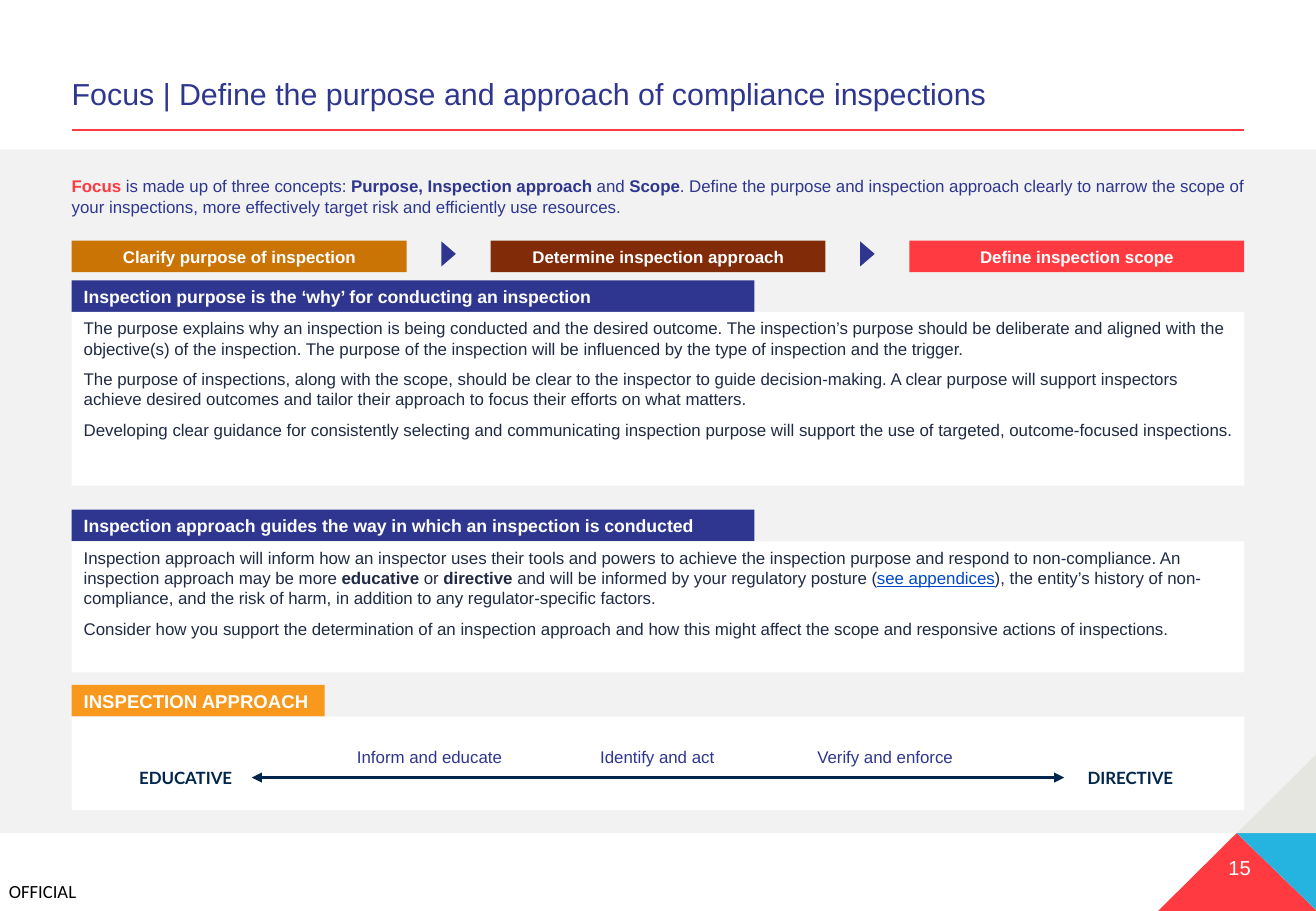
from dataclasses import dataclass

from lxml.etree import SubElement
from pptx import Presentation
from pptx.dml.color import RGBColor
from pptx.enum.shapes import MSO_CONNECTOR, MSO_SHAPE
from pptx.enum.text import MSO_ANCHOR, MSO_AUTO_SIZE, PP_ALIGN
from pptx.oxml.ns import qn
from pptx.util import Inches, Pt


@dataclass(frozen=True)
class Theme:
    navy: str = "2E368F"
    red: str = "FF3A40"
    ochre: str = "CA7406"
    brown: str = "822B08"
    orange: str = "F8981D"
    blue: str = "25B3E0"
    stone: str = "E6E6E1"
    grey: str = "F2F2F2"
    white: str = "FFFFFF"
    black: str = "000000"
    ink: str = "1F2A44"
    link: str = "0048C7"
    axis: str = "00264D"
    sans: str = "Arial"
    label: str = "Lato"
    marking: str = "Calibri"
    title_size: float = 18
    number_size: float = 12
    tag_size: float = 11
    heading_size: float = 10.5
    body_size: float = 10


THEME = Theme()
WIDTH, HEIGHT = 10.83, 7.5
MARGIN, COLUMNS = 0.59, 14
COLUMN = (WIDTH - 2 * MARGIN) / COLUMNS
ROW = 0.26
BLEED = MARGIN / COLUMN
FULL = COLUMNS + 2 * BLEED


def x(column):
    return Inches(MARGIN + column * COLUMN)


def y(row):
    return Inches(row * ROW)


def style_font(font, color, size=None, name=None, bold=None):
    font.color.rgb = RGBColor.from_string(color)
    if size:
        font.size = Pt(size)
    if name:
        font.name = name
    if bold is not None:
        font.bold = bold


class GridSlide:
    """One page on a grid: columns count from the left margin, rows from the top."""

    def __init__(self, theme):
        self.theme = theme
        self.deck = Presentation()
        self.deck.slide_width, self.deck.slide_height = Inches(WIDTH), Inches(HEIGHT)
        self.page = self.deck.slides.add_slide(self.deck.slide_layouts[1])

    def paint(self, shape, fill):
        shape.shadow.inherit = False
        shape.fill.solid()
        shape.fill.fore_color.rgb = RGBColor.from_string(fill)
        shape.line.fill.background()
        return shape

    def shape(self, column, row, columns, rows, fill, kind=MSO_SHAPE.RECTANGLE):
        return self.paint(self.page.shapes.add_shape(
            kind, x(column), y(row), Inches(columns * COLUMN), y(rows)), fill)

    def text_box(self, column, row, columns, rows):
        return self.page.shapes.add_textbox(x(column), y(row), Inches(columns * COLUMN), y(rows))

    def placeholder(self, box, row, rows):
        box.left, box.top, box.width, box.height = x(0), y(row), Inches(COLUMNS * COLUMN), y(rows)
        return box

    def set_text(self, box, paragraphs, color, size=None, name=None, bold=False,
                 align=PP_ALIGN.LEFT, anchor=MSO_ANCHOR.MIDDLE, inset=(0.1, 0.05), after=0, spacing=1):
        """Fill a box; a paragraph is a string or a list of (text, emphasis) spans."""
        frame = box.text_frame
        frame.word_wrap, frame.auto_size = True, MSO_AUTO_SIZE.NONE
        frame.vertical_anchor = anchor
        frame.margin_left = frame.margin_right = Inches(inset[0])
        frame.margin_top = frame.margin_bottom = Inches(inset[1])
        for index, content in enumerate(paragraphs):
            para = frame.add_paragraph() if index else frame.paragraphs[0]
            properties = para._p.get_or_add_pPr()
            properties.set("marL", "0")
            properties.set("indent", "0")
            SubElement(properties, qn("a:buNone"))
            para.alignment, para.line_spacing = align, spacing
            para.space_before, para.space_after = Pt(0), Pt(after)
            style_font(para.font, color, size or self.theme.body_size, name or self.theme.sans, bold)
            for text, emphasis in [(content, "")] if isinstance(content, str) else content:
                span = para.add_run()
                span.text = text
                if emphasis in ("bold", "focus"):
                    span.font.bold = True
                if emphasis == "focus":
                    style_font(span.font, self.theme.red)
                if emphasis == "link":
                    style_font(span.font, self.theme.link)
                    span.font.underline = True

    def line(self, start, end, row, color, weight, arrows=False):
        connector = self.page.shapes.add_connector(MSO_CONNECTOR.STRAIGHT, x(start), y(row), x(end), y(row))
        connector.line.color.rgb = RGBColor.from_string(color)
        connector.line.width = Pt(weight)
        properties = connector.element.spPr
        if arrows:
            for tip in ("a:headEnd", "a:tailEnd"):
                SubElement(properties.find(qn("a:ln")), qn(tip), type="triangle")
        SubElement(properties, qn("a:effectLst"))

    def triangle(self, corners, fill):
        points = [(x(column), y(row)) for column, row in corners]
        builder = self.page.shapes.build_freeform(*points[0], scale=1.0)
        builder.add_line_segments(points[1:], close=True)
        self.paint(builder.convert_to_shape(), fill)

    def section(self, heading, row, columns, rows, fill, size, paragraphs=()):
        """A heading bar one row high with a white panel below it."""
        bar = self.shape(0, row, columns, 1, fill)
        self.set_text(bar, [heading], self.theme.white, size, bold=True)
        panel = self.shape(0, row + 1, COLUMNS, rows, self.theme.white)
        if paragraphs:
            self.set_text(panel, paragraphs, self.theme.ink, anchor=MSO_ANCHOR.TOP, after=6)


PURPOSE = [
    "The purpose explains why an inspection is being conducted and the desired outcome. The inspection’s purpose should be deliberate and aligned with the objective(s) of the inspection. The purpose of the inspection will be influenced by the type of inspection and the trigger.",
    "The purpose of inspections, along with the scope, should be clear to the inspector to guide decision-making. A clear purpose will support inspectors achieve desired outcomes and tailor their approach to focus their efforts on what matters.",
    "Developing clear guidance for consistently selecting and communicating inspection purpose will support the use of targeted, outcome-focused inspections.",
]
APPROACH = [
    [("Inspection approach will inform how an inspector uses their tools and powers to achieve the inspection purpose and respond to non-compliance. An inspection approach may be more ", ""),
     ("educative", "bold"), (" or ", ""), ("directive ", "bold"),
     ("and will be informed by your regulatory posture (", ""), ("see appendices", "link"),
     ("), the entity’s history of non-compliance, and the risk of harm, in addition to any regulator-specific factors.", "")],
    "Consider how you support the determination of an inspection approach and how this might affect the scope and responsive actions of inspections.",
]
INTRO = [
    ("Focus", "focus"), (" is made up of three concepts: ", ""),
    ("Purpose, Inspection approach", "bold"), (" and ", ""), ("Scope", "bold"),
    (". Define the purpose and inspection approach clearly to narrow the scope of your inspections, more effectively target risk and efficiently use resources.", ""),
]


def draw_frame(slide):
    theme = slide.theme
    band = slide.shape(-BLEED, 4.73, FULL, 21.65, theme.grey).element
    band.getparent().insert(2, band)  # behind the placeholders
    apex, right, bottom = (13.91, 26.38), 14.87, 28.85
    slide.triangle([apex, (12.97, bottom), (right, bottom)], theme.red)
    slide.triangle([(right, apex[1]), apex, (right, bottom)], theme.blue)
    slide.triangle([(right, 23.85), apex, (right, apex[1])], theme.stone)
    slide.set_text(slide.text_box(12.82, 26.88, 1.26, 1.15), ["15"], theme.white, theme.number_size,
                   align=PP_ALIGN.RIGHT, anchor=MSO_ANCHOR.TOP, inset=(0, 0.05))
    slide.set_text(slide.text_box(-0.75, 27.88, 0.9, 0.69), ["OFFICIAL"], theme.black, theme.tag_size,
                   theme.marking, anchor=MSO_ANCHOR.TOP, inset=(0, 0))
    slide.line(0, COLUMNS, 4.12, theme.red, 1.25)


def draw_steps(slide):
    theme = slide.theme
    steps = [("Clarify purpose of inspection", theme.ochre),
             ("Determine inspection approach", theme.brown),
             ("Define inspection scope", theme.red)]
    for index, (step, fill) in enumerate(steps):
        column = 5 * index
        slide.set_text(slide.shape(column, 7.62, 4, 1, fill), [step], theme.white,
                       bold=True, align=PP_ALIGN.CENTER)
        if index < len(steps) - 1:
            arrow = slide.shape(column + 4.35, 7.81, 0.3, 0.46, theme.navy, MSO_SHAPE.ISOSCELES_TRIANGLE)
            arrow.rotation = 90


def draw_spectrum(slide):
    theme, start = slide.theme, 2.15
    slide.line(start, COLUMNS - start, 24.62, theme.axis, 2, arrows=True)
    for column, end in ((0.57, "EDUCATIVE"), (COLUMNS - start, "DIRECTIVE")):
        slide.set_text(slide.text_box(column, 24.23, 1.58, 0.77), [end], theme.axis,
                       name=theme.label, bold=True, align=PP_ALIGN.CENTER)
    for index, stage in enumerate(("Inform and educate", "Identify and act", "Verify and enforce")):
        box = slide.shape(3.22 + 2.72 * index, 23.65, 2.1, 0.65, theme.white)
        slide.set_text(box, [stage], theme.navy, align=PP_ALIGN.CENTER, inset=(0.04, 0.05))


def main():
    slide = GridSlide(THEME)
    draw_frame(slide)
    slide.set_text(slide.placeholder(slide.page.shapes.title, 2.27, 1.46),
                   ["Focus | Define the purpose and approach of compliance inspections"],
                   THEME.navy, THEME.title_size, anchor=MSO_ANCHOR.BOTTOM, inset=(0, 0.05), spacing=0.9)
    slide.set_text(slide.placeholder(slide.page.placeholders[1], 5.38, 1.5), [INTRO], THEME.navy,
                   anchor=MSO_ANCHOR.TOP, inset=(0, 0.05), after=6)
    draw_steps(slide)
    slide.section("Inspection purpose is the ‘why’ for conducting an inspection", 8.88, 8.15, 5.5,
                  THEME.navy, THEME.heading_size, PURPOSE)
    slide.section("Inspection approach guides the way in which an inspection is conducted", 16.14, 8.15, 4.15,
                  THEME.navy, THEME.heading_size, APPROACH)
    slide.section("INSPECTION APPROACH", 21.69, 3.02, 2.96, THEME.orange, THEME.tag_size)
    draw_spectrum(slide)
    slide.deck.save("out.pptx")


if __name__ == "__main__":
    main()
